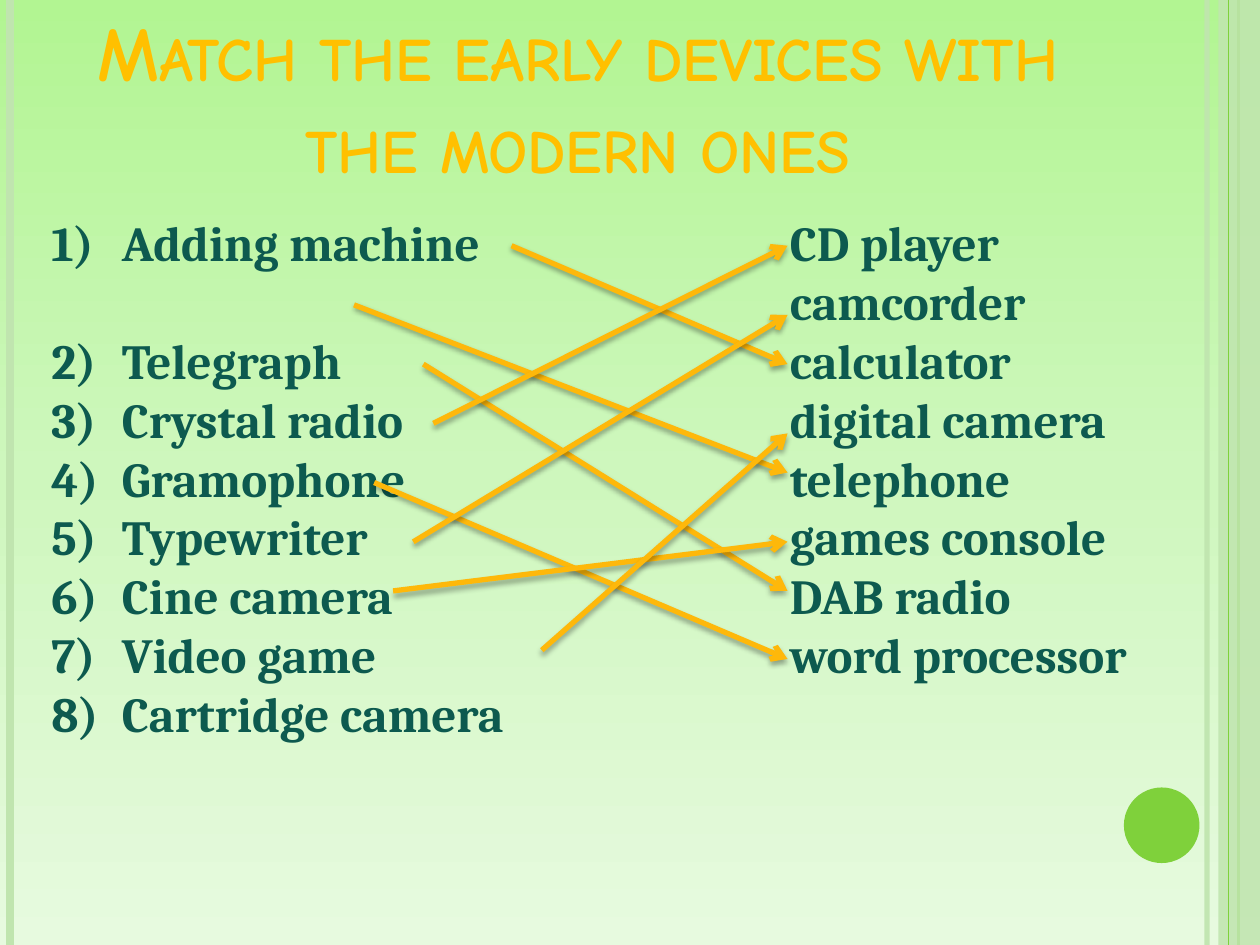
import copy

import pptx
import pptx.util
import pptx.dml.color
import pptx.enum.shapes
import pptx.enum.text
import pptx.oxml
import pptx.oxml.ns
from pptx.util import Inches

TITLE = "Match the early devices with the modern ones"
EARLY = ["Adding machine", "Telegraph", "Crystal radio", "Gramophone",
         "Typewriter", "Cine camera", "Video game", "Cartridge camera"]
MODERN = ["CD player", "camcorder", "calculator", "digital camera",
          "telephone", "games console", "DAB radio", "word processor"]

# Start x, start y and end y; every arrow ends at the modern column
ARROW_END = 6.25
ARROWS = [(4.06, 1.95, 2.89), (2.81, 2.42, 3.75), (3.36, 2.89, 4.69),
          (3.44, 3.36, 1.95), (2.97, 3.83, 5.23), (3.28, 4.3, 2.5),
          (3.12, 4.69, 4.3), (4.3, 5.16, 3.44)]

BACKGROUND = [(0, "B2F592"), (0.5, "CEF7BD"), (1, "E7FADF")]
PALE, GREEN, ARROW_COLOUR = "C0E5AF", "7FD13B", "FEB80A"
TITLE_FONT = {"name": "Comic Neue", "size": pptx.util.Pt(44), "bold": True}
LIST_FONT = {"name": "Cambria", "size": pptx.util.Pt(28), "bold": True}
LINE_PITCH = pptx.util.Pt(33.6)
HANGING = Inches(0.56)

SHADOW = ('<a:outerShdw blurRad="39370" dist="22860" dir="5400000" rotWithShape="0">'
          '<a:srgbClr val="000000"><a:alpha val="35000"/></a:srgbClr></a:outerShdw>')


def xml(tag, inner="", **attributes):
    pairs = "".join(f' {key}="{value}"' for key, value in attributes.items())
    namespace = pptx.oxml.ns.nsdecls("a")
    return pptx.oxml.parse_xml(f"<a:{tag} {namespace}{pairs}>{inner}</a:{tag}>")


def rgb(value):
    return pptx.dml.color.RGBColor.from_string(value)


def set_opacity(element, percent):
    colour = element.find(".//" + pptx.oxml.ns.qn("a:srgbClr"))
    colour.append(xml("alpha", val=percent * 1000))


def paint_background(page):
    fill = page.background.fill
    fill.gradient()
    fill.gradient_angle = 270
    stops = page.element.find(".//" + pptx.oxml.ns.qn("a:gsLst"))
    stops.append(copy.deepcopy(stops[0]))
    for stop, (position, colour) in zip(fill.gradient_stops, BACKGROUND):
        stop.position = position
        stop.color.rgb = rgb(colour)


def add_line(page, start, end, colour, width, effect=""):
    points = [Inches(value) for value in (*start, *end)]
    line = page.shapes.add_connector(pptx.enum.shapes.MSO_CONNECTOR.STRAIGHT, *points)
    line.line.color.rgb = rgb(colour)
    line.line.width = pptx.util.Pt(width)
    line.element.spPr.append(xml("effectLst", effect))
    return line


def add_rule(page, x, colour, width):
    return add_line(page, (x, 0), (x, 7.5), colour, width)


def add_shape(page, kind, place, colour):
    shape = page.shapes.add_shape(kind, *[Inches(value) for value in place])
    shape.shadow.inherit = False
    shape.fill.solid()
    shape.fill.fore_color.rgb = rgb(colour)
    shape.line.fill.background()
    return shape


def add_text(page, place, lines, font, colour):
    box = page.shapes.add_textbox(*[Inches(value) for value in place])
    frame = box.text_frame
    frame.word_wrap = True
    frame.text = "\n".join(lines)
    for paragraph in frame.paragraphs:
        span = paragraph.runs[0]
        for name, value in font.items():
            setattr(span.font, name, value)
        span.font.color.rgb = rgb(colour)
    return frame


def add_title(page):
    frame = add_text(page, (0.5, 0.3, 8.17, 1.25), [TITLE], TITLE_FONT, "FFC000")
    frame.vertical_anchor = pptx.enum.text.MSO_ANCHOR.BOTTOM
    paragraph = frame.paragraphs[0]
    paragraph.alignment = pptx.enum.text.PP_ALIGN.CENTER
    paragraph.runs[0].font._element.set("cap", "small")


def number_paragraphs(frame):
    for paragraph in frame.paragraphs:
        properties = paragraph._p.get_or_add_pPr()
        properties.set("marL", str(HANGING))
        properties.set("indent", str(-HANGING))
        properties.append(xml("buFont", typeface="+mj-lt"))
        properties.append(xml("buAutoNum", type="arabicParenR"))


def main():
    deck = pptx.Presentation()
    deck.slide_width, deck.slide_height = Inches(10), Inches(7.5)
    page = deck.slides.add_slide(deck.slide_layouts[6])
    paint_background(page)

    shapes = pptx.enum.shapes.MSO_SHAPE
    set_opacity(add_rule(page, 9.58, PALE, 3).element, 93)
    add_rule(page, 0.08, PALE, 4.5)
    add_rule(page, 9.83, GREEN, 1.5)
    band = add_shape(page, shapes.RECTANGLE, (9.67, 0, 0.33, 7.5), PALE)
    set_opacity(band.element, 87)
    add_rule(page, 9.75, GREEN, 0.75)
    add_shape(page, shapes.OVAL, (8.92, 6.25, 0.6, 0.6), GREEN)

    add_title(page)
    early = add_text(page, (0.31, 1.64, 4.38, 3.87), EARLY, LIST_FONT, "0D5A4F")
    number_paragraphs(early)
    early.paragraphs[0].space_after = LINE_PITCH
    add_text(page, (6.17, 1.64, 3.52, 5.76), MODERN, LIST_FONT, "0D5A4F")

    for x, y, end_y in ARROWS:
        arrow = add_line(page, (x, y), (ARROW_END, end_y), ARROW_COLOUR, 3, SHADOW)
        arrow.line._get_or_add_ln().append(xml("tailEnd", type="arrow"))

    deck.save("out.pptx")


if __name__ == "__main__":
    main()
